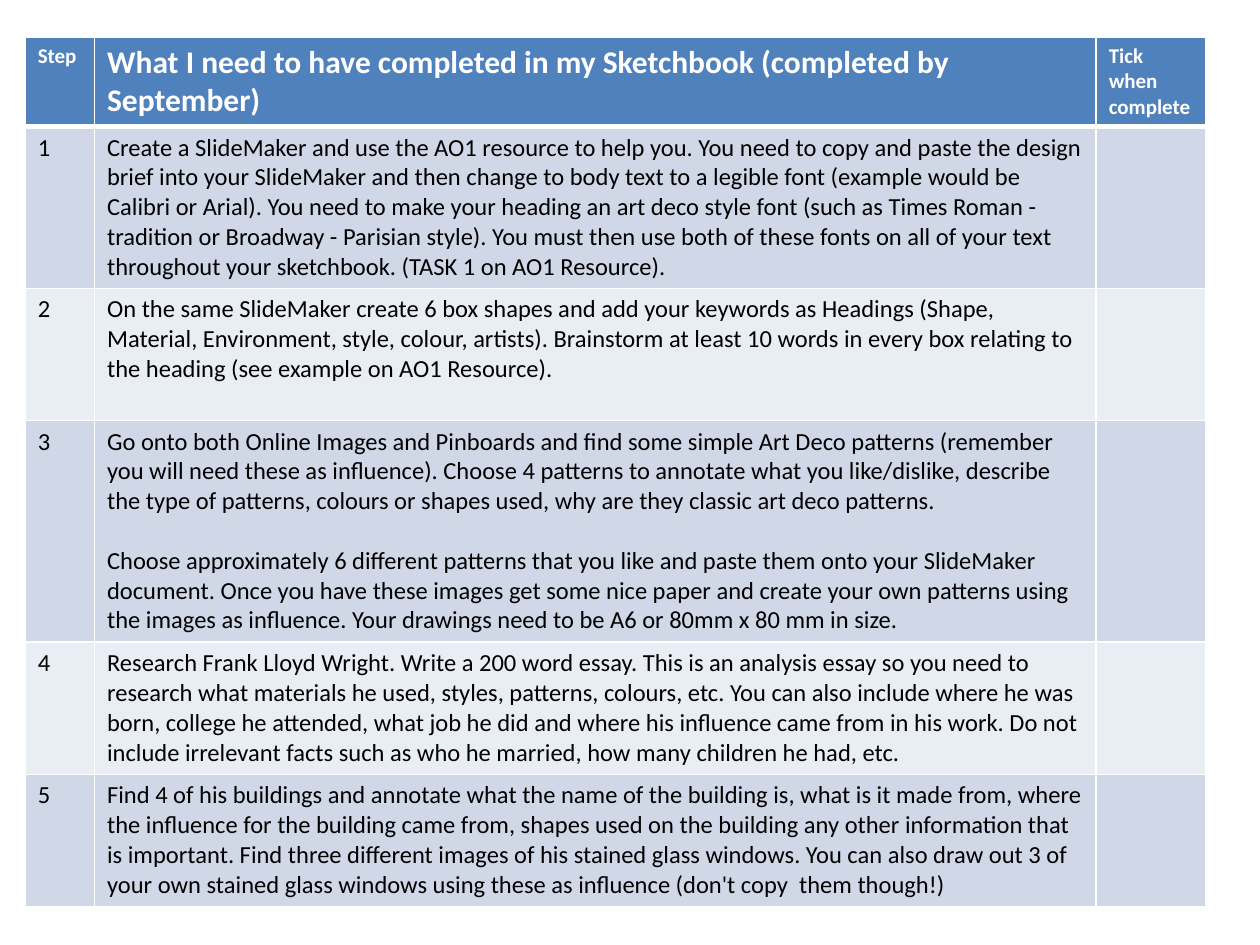
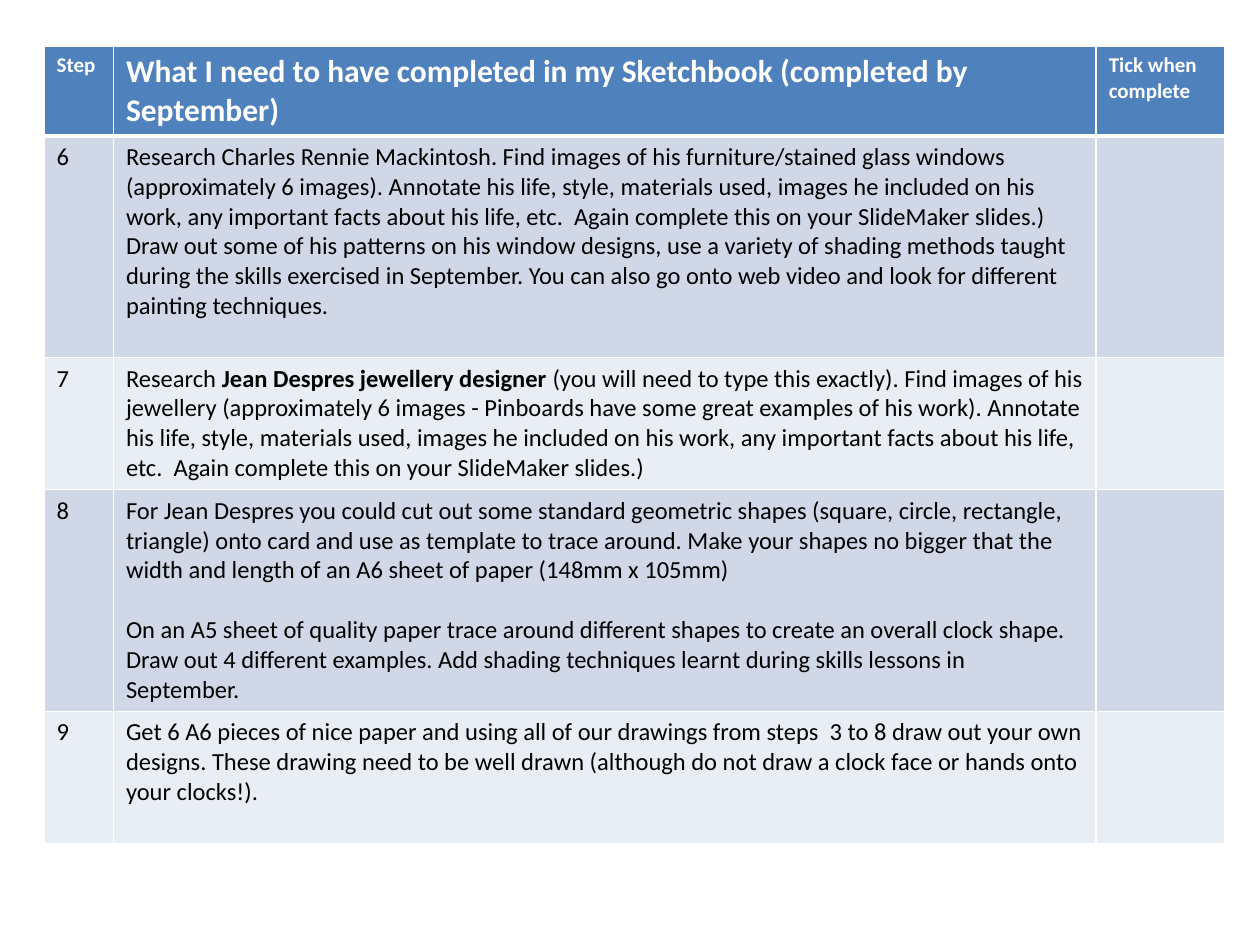
import pptx
import pptx.dml.color
import pptx.oxml.ns
import pptx.util
from lxml import etree

FONT = "Calibri"
WHITE, BLACK, HEADER_BLUE = "FFFFFF", "000000", "4F81BD"
BANDS = ["D0D8E8", "E9EDF4"]

# Lengths are percentages of the slide's width or height.
HEADER_HEIGHT = 9.3
LINE_HEIGHT = 3.16
ROW_PADDING = 1.34

STEP_SIZE, TITLE_SIZE, BODY_SIZE = 12, 18, 14
PARAGRAPH_GAP = 17
HEADINGS = [
    ("Step", STEP_SIZE),
    ("What I need to have completed in my Sketchbook (completed by September)", TITLE_SIZE),
    ("Tick when complete", STEP_SIZE),
]

# Each step: lines of room in its row, then its paragraphs (** marks bold).
FIRST_STEPS = [
    (5, ["Create a SlideMaker and use the AO1 resource to help you. You need to copy and paste the "
         "design brief into your SlideMaker and then change to body text to a legible font (example "
         "would be Calibri or Arial). You need to make your heading an art deco style font (such as "
         "Times Roman - tradition or Broadway - Parisian style). You must then use both of these fonts "
         "on all of your text throughout your sketchbook. (TASK 1 on AO1 Resource)."]),
    (4, ["On the same SlideMaker create 6 box shapes and add your keywords as Headings (Shape, "
         "Material, Environment, style, colour, artists). Brainstorm at least 10 words in every box "
         "relating to the heading (see example on AO1 Resource)."]),
    (7, ["Go onto both Online Images and Pinboards and find some simple Art Deco patterns (remember "
         "you will need these as influence). Choose 4 patterns to annotate what you like/dislike, "
         "describe the type of patterns, colours or shapes used, why are they classic art deco patterns.",
         "Choose approximately 6 different patterns that you like and paste them onto your SlideMaker "
         "document. Once you have these images get some nice paper and create your own patterns using "
         "the images as influence. Your drawings need to be A6 or 80mm x 80 mm in size."]),
    (4, ["Research Frank Lloyd Wright. Write a 200 word essay. This is an analysis essay so you need to "
         "research what materials he used, styles, patterns, colours, etc. You can also include where "
         "he was born, college he attended, what job he did and where his influence came from in his "
         "work. Do not include irrelevant facts such as who he married, how many children he had, etc."]),
    (4, ["Find 4 of his buildings and annotate what the name of the building is, what is it made from, "
         "where the influence for the building came from, shapes used on the building any other "
         "information that is important. Find three different images of his stained glass windows. You "
         "can also draw out 3 of your own stained glass windows using these as influence (don't copy  "
         "them though!)"]),
]
LATER_STEPS = [
    (7, ["Research Charles Rennie Mackintosh. Find images of his furniture/stained glass windows "
         "(approximately 6 images). Annotate his life, style, materials used, images he included on his "
         "work, any important facts about his life, etc.  Again complete this on your SlideMaker "
         "slides.) Draw out some of his patterns on his window designs, use a variety of shading "
         "methods taught during the skills exercised in September. You can also go onto web video and "
         "look for different painting techniques."]),
    (4, ["Research **Jean Despres jewellery designer **(you will need to type this exactly). Find images "
         "of his jewellery (approximately 6 images - Pinboards have some great examples of his work). "
         "Annotate his life, style, materials used, images he included on his work, any important "
         "facts about his life, etc.  Again complete this on your SlideMaker slides.)"]),
    (7, ["For Jean Despres you could cut out some standard geometric shapes (square, circle, rectangle, "
         "triangle) onto card and use as template to trace around. Make your shapes no bigger that the "
         "width and length of an A6 sheet of paper (148mm x 105mm)",
         "On an A5 sheet of quality paper trace around different shapes to create an overall clock "
         "shape.  Draw out 4 different examples. Add shading techniques learnt during skills lessons "
         "in September."]),
    (4, ["Get 6 A6 pieces of nice paper and using all of our drawings from steps  3 to 8 draw out your "
         "own designs. These drawing need to be well drawn (although do not draw a clock face or hands "
         "onto your clocks!)."]),
]


def color(hex_string):
    return pptx.dml.color.RGBColor.from_string(hex_string)


class Checklist:
    def __init__(self):
        self.presentation = pptx.Presentation()
        self.presentation.slide_width = pptx.util.Inches(10)
        self.presentation.slide_height = pptx.util.Inches(7.5)
        self.slide = None

    def across(self, percent):
        return int(self.presentation.slide_width * percent / 100)

    def down(self, percent):
        return int(self.presentation.slide_height * percent / 100)

    def add_slide(self):
        self.slide = self.presentation.slides.add_slide(self.presentation.slide_layouts[6])

    def set_borders(self, cell, top, bottom):
        properties = cell._tc.get_or_add_tcPr()
        for side, points in (("L", 1), ("R", 1), ("T", top), ("B", bottom)):
            line = etree.SubElement(properties, pptx.oxml.ns.qn(f"a:ln{side}"),
                                    w=str(pptx.util.Pt(points)))
            fill = etree.SubElement(line, pptx.oxml.ns.qn("a:solidFill"))
            etree.SubElement(fill, pptx.oxml.ns.qn("a:srgbClr"), val=WHITE)

    def fill_cell(self, cell, fill, paragraphs, size, text_color, bold=False, top=1, bottom=1):
        self.set_borders(cell, top, bottom)
        cell.fill.solid()
        cell.fill.fore_color.rgb = color(fill)
        for index, text in enumerate(paragraphs):
            if index == 0:
                paragraph = cell.text_frame.paragraphs[0]
            else:
                paragraph = cell.text_frame.add_paragraph()
                paragraph.space_before = pptx.util.Pt(PARAGRAPH_GAP)
            for part, words in enumerate(text.split("**")):
                run = paragraph.add_run()
                run.text = words
                run.font.name = FONT
                run.font.size = pptx.util.Pt(size)
                run.font.bold = bold or part % 2 == 1
                run.font.color.rgb = color(text_color)

    def add_step_table(self, left, top, widths, steps, first_number):
        heights = [HEADER_HEIGHT] + [lines * LINE_HEIGHT + ROW_PADDING for lines, _ in steps]
        table = self.slide.shapes.add_table(
            len(heights), len(widths), self.across(left), self.down(top),
            self.across(sum(widths)), self.down(sum(heights))).table
        table.horz_banding = False
        for column, width in zip(table.columns, widths):
            column.width = self.across(width)
        for row, height in zip(table.rows, heights):
            row.height = self.down(height)

        for column, (heading, size) in enumerate(HEADINGS):
            self.fill_cell(table.cell(0, column), HEADER_BLUE, [heading], size, WHITE,
                           bold=True, bottom=3)
        for index, (_, paragraphs) in enumerate(steps):
            contents = [[str(first_number + index)], paragraphs, []]
            for column, content in enumerate(contents):
                self.fill_cell(table.cell(index + 1, column), BANDS[index % 2], content,
                               BODY_SIZE, BLACK, top=1 if index else 3)


def main():
    checklist = Checklist()
    checklist.add_slide()
    checklist.add_step_table(2, 3.9, [5.5, 79.5, 8.7], FIRST_STEPS, 1)
    checklist.add_slide()
    checklist.add_step_table(3.5, 4.9, [5.5, 78, 10.2], LATER_STEPS, len(FIRST_STEPS) + 1)
    checklist.presentation.save("out.pptx")


if __name__ == "__main__":
    main()
